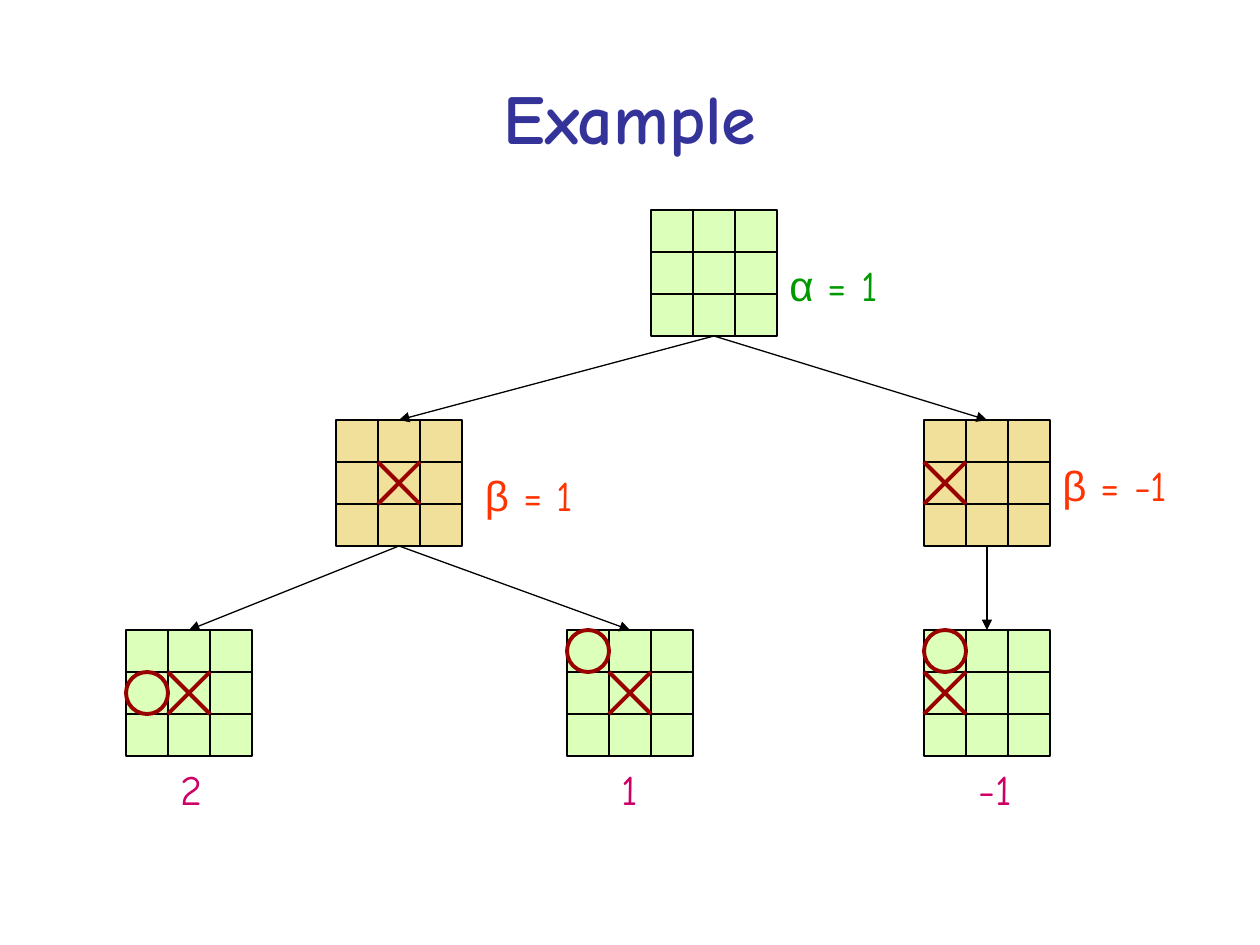
from lxml import etree
from pptx import Presentation
from pptx.dml.color import RGBColor
from pptx.enum.shapes import MSO_CONNECTOR, MSO_SHAPE
from pptx.enum.text import MSO_ANCHOR, MSO_AUTO_SIZE, PP_ALIGN
from pptx.oxml.ns import qn
from pptx.util import Pt

STRAIGHT = MSO_CONNECTOR.STRAIGHT
RECTANGLE, OVAL = MSO_SHAPE.RECTANGLE, MSO_SHAPE.OVAL
MIDDLE, CENTER = MSO_ANCHOR.MIDDLE, PP_ALIGN.CENTER
FIT_SHAPE = MSO_AUTO_SIZE.SHAPE_TO_FIT_TEXT

CELL = 24
BOARD = 3 * CELL
BLACK, MARK = "000000", "990000"
GREEN, TAN = "DCFFB9", "F0E09A"
ALPHA, BETA, SCORE = "009900", "FF3300", "CC0066"


def color(value):
    """Convert a hex string to a color."""
    return RGBColor.from_string(value)


class GameTree:
    """Draw the elements of a game tree on one slide."""

    font, symbol_font = "Comic Neue", "Arial"
    thin, thick = 0.75, 2.25

    def __init__(self, slide):
        """Keep the slide to draw on."""
        self.slide = slide

    def format_font(self, font, name, size, value, bold=False):
        """Apply a typeface, size and color."""
        font.name, font.size, font.bold = name, Pt(size), bold
        font.color.rgb = color(value)

    def title(self, text, left, top, width, height):
        """Place and format the title."""
        shape = self.slide.shapes.title
        shape.left, shape.top = Pt(left), Pt(top)
        shape.width, shape.height = Pt(width), Pt(height)
        text_frame = shape.text_frame
        text_frame.text = text
        text_frame.vertical_anchor = MIDDLE
        paragraph = text_frame.paragraphs[0]
        paragraph.alignment = CENTER
        self.format_font(paragraph.runs[0].font, self.font, 40, "333399", True)

    def label(self, symbol, text, left, top, width, value):
        """Add a value label with an optional Greek symbol."""
        shape = self.slide.shapes.add_textbox(Pt(left), Pt(top), Pt(width), Pt(36))
        text_frame = shape.text_frame
        text_frame.word_wrap = False
        text_frame.auto_size = FIT_SHAPE
        paragraph = text_frame.paragraphs[0]
        for content, name in ((symbol, self.symbol_font), (text, self.font)):
            if content:
                run = paragraph.add_run()
                run.text = content
                self.format_font(run.font, name, 24, value)

    def line(self, start, end, value=BLACK, width=thin, arrow=False):
        """Add a straight line, optionally with an arrowhead."""
        connector = self.slide.shapes.add_connector(
            STRAIGHT, *(Pt(number) for number in (*start, *end)))
        connector.line.color.rgb = color(value)
        connector.line.width = Pt(width)
        if arrow:
            outline = connector.line._get_or_add_ln()
            etree.SubElement(outline, qn("a:tailEnd"), type="triangle")
        etree.SubElement(connector._element.spPr, qn("a:effectLst"))

    def square_shape(self, kind, left, top, size, fill, value, width):
        """Add a shape of equal width and height."""
        shape = self.slide.shapes.add_shape(kind, Pt(left), Pt(top), Pt(size), Pt(size))
        shape.shadow.inherit = False
        if fill:
            shape.fill.solid()
            shape.fill.fore_color.rgb = color(fill)
        else:
            shape.fill.background()
        shape.line.color.rgb = color(value)
        shape.line.width = Pt(width)

    def cross(self, left, top):
        """Mark a cell with a cross."""
        right, bottom = left + CELL, top + CELL
        self.line((left, top), (right, bottom), MARK, self.thick)
        self.line((left, bottom), (right, top), MARK, self.thick)

    def board(self, left, top, fill, cross=None, nought=None):
        """Add a board with marks given as column and row."""
        self.square_shape(RECTANGLE, left, top, BOARD, fill, BLACK, self.thin)
        for offset in (CELL, 2 * CELL):
            self.line((left + offset, top), (left + offset, top + BOARD))
            self.line((left, top + offset), (left + BOARD, top + offset))
        if cross:
            self.cross(left + cross[0] * CELL, top + cross[1] * CELL)
        if nought:
            self.square_shape(OVAL, left + nought[0] * CELL, top + nought[1] * CELL,
                              CELL, None, MARK, self.thick)

    def branch(self, parent, child):
        """Connect a parent board to a child board."""
        self.line((parent[0] + BOARD / 2, parent[1] + BOARD),
                  (child[0] + BOARD / 2, child[1]), arrow=True)


def main():
    """Build and save the game tree slide."""
    presentation = Presentation()
    presentation.slide_width, presentation.slide_height = Pt(720), Pt(540)
    slide = presentation.slides.add_slide(presentation.slide_layouts[5])
    tree = GameTree(slide)
    tree.title("Example", 36, 21.6, 648, 90)

    root, center_move, side_move = (372, 120), (192, 240), (528, 240)
    left_reply, corner_reply, side_reply = (72, 360), (324, 360), (528, 360)
    boards = (
        (root, GREEN, None, None),
        (center_move, TAN, (1, 1), None),
        (side_move, TAN, (0, 1), None),
        (left_reply, GREEN, (1, 1), (0, 1)),
        (corner_reply, GREEN, (1, 1), (0, 0)),
        (side_reply, GREEN, (0, 1), (0, 0)),
    )
    for position, fill, cross, nought in boards:
        tree.board(*position, fill, cross, nought)

    branches = (
        (root, center_move), (root, side_move), (center_move, left_reply),
        (center_move, corner_reply), (side_move, side_reply),
    )
    for parent, child in branches:
        tree.branch(parent, child)

    labels = (
        ("α", " = 1", 444, 144.7, 67, ALPHA),
        ("β", " = 1", 270, 265, 64.8, BETA),
        ("β", " = -1", 600, 259.2, 82, BETA),
        ("", "2", 96, 432.7, 28.8, SCORE),
        ("", "1", 348, 432.7, 25.2, SCORE),
        ("", "-1", 552, 432.7, 35.3, SCORE),
    )
    for label in labels:
        tree.label(*label)

    presentation.save("out.pptx")


if __name__ == "__main__":
    main()
